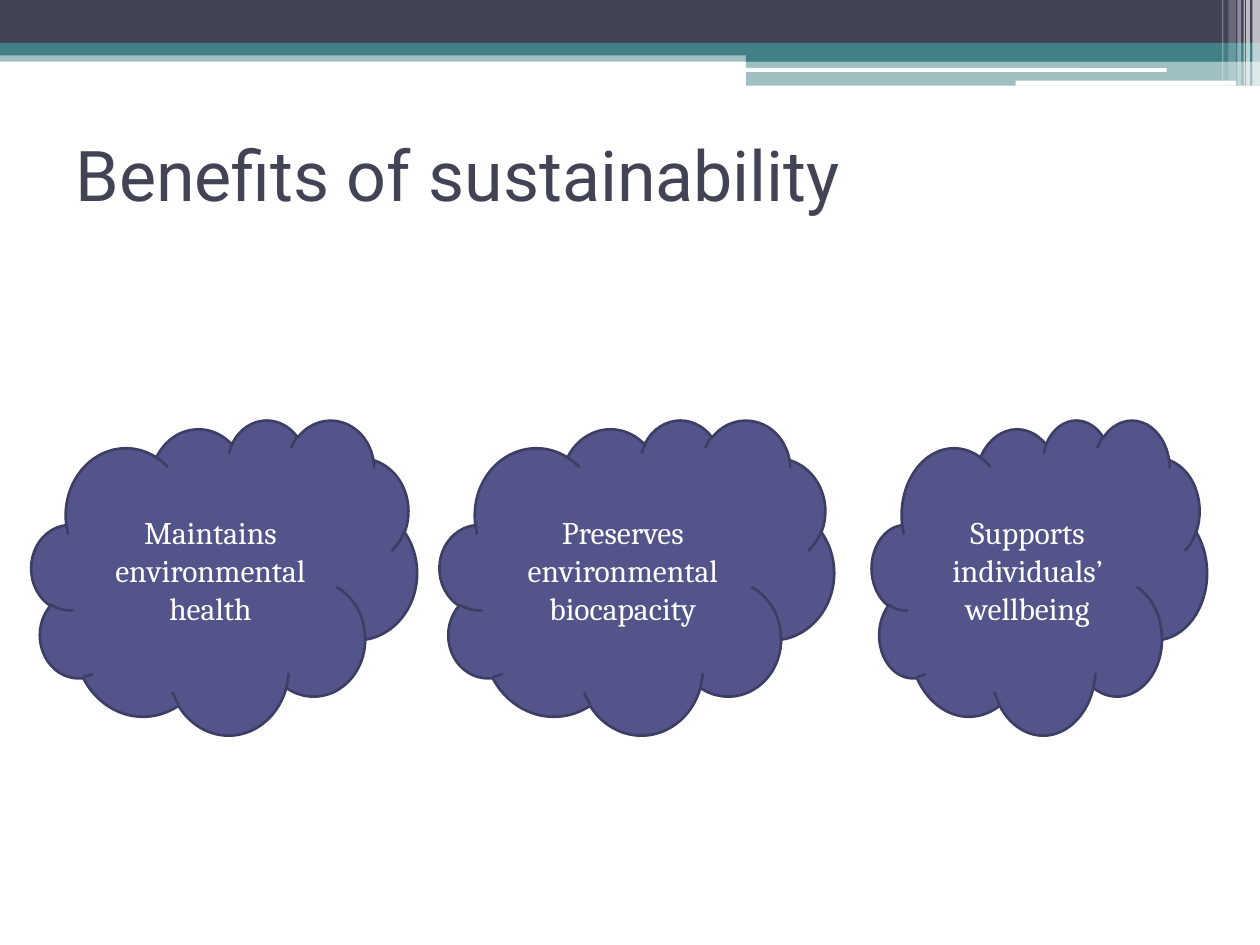
from lxml import etree
from pptx import Presentation
from pptx import util as u
from pptx.dml.color import RGBColor
from pptx.enum import shapes, text
from pptx.oxml.ns import qn

SLATE = RGBColor(0x42, 0x44, 0x56)
TEAL = RGBColor(0x43, 0x80, 0x86)
WHITE = RGBColor(0xFF, 0xFF, 0xFF)
INDIGO = RGBColor(0x53, 0x54, 0x8A)
DARK_INDIGO = RGBColor(0x3D, 0x3E, 0x66)

deck = Presentation()
deck.slide_width, deck.slide_height = u.Inches(10), u.Inches(7.5)
page = deck.slides.add_slide(deck.slide_layouts[5])


def add_filled(preset, bounds, color, opacity=100):
    shape = page.shapes.add_shape(preset, *[u.Inches(length) for length in bounds])
    shape.shadow.inherit = False
    shape.fill.solid()
    shape.fill.fore_color.rgb = color
    shape.line.fill.background()
    if opacity < 100:
        color_node = shape.fill._xPr.find(".//" + qn("a:srgbClr"))
        etree.SubElement(color_node, qn("a:alpha"), val=str(opacity * 1000))
    return shape


RECTANGLE = shapes.MSO_SHAPE.RECTANGLE
bands = [
    (0, 0.4, 10, 0.09, TEAL, 50),
    (0, 0, 10, 0.34, SLATE, 100),
    (0, 0.34, 10, 0.1, TEAL, 100),
    (5.92, 0.39, 4.08, 0.1, TEAL, 100),
    (5.92, 0.48, 4.08, 0.2, TEAL, 50),
]
for *bounds, color, opacity in bands:
    add_filled(RECTANGLE, bounds, color, opacity)

for bounds in [(5.91, 0.54, 3.35, 0.03), (8.06, 0.64, 1.75, 0.04)]:
    add_filled(shapes.MSO_SHAPE.ROUNDED_RECTANGLE, bounds, WHITE)

stripes = [
    (9.94, 0.06, 0.68, 65),
    (9.89, 0.03, 0.68, 65),
    (9.87, 0.01, 0.68, 60),
    (9.82, 0.03, 0.68, 40),
    (9.75, 0.06, 0.64, 20),
    (9.7, 0.01, 0.64, 30),
]
for left, width, height, opacity in stripes:
    add_filled(RECTANGLE, (left, 0, width, height), WHITE, opacity)

title = page.shapes.title
title.left, title.top = u.Inches(0.5), u.Inches(0.92)
title.width, title.height = u.Inches(9), u.Inches(0.92)
title.text_frame.text = "Benefits of sustainability"
title.text_frame.vertical_anchor = text.MSO_ANCHOR.MIDDLE
para = title.text_frame.paragraphs[0]
para.alignment = text.PP_ALIGN.LEFT
para.font.size = u.Pt(40)
para.font.name = "Roboto"
para.font.color.rgb = SLATE

benefits = [
    (0.25, 3.06, "Maintains environmental health"),
    (3.49, 3.13, "Preserves environmental biocapacity"),
    (6.92, 2.66, "Supports individuals’ wellbeing"),
]
for left, width, benefit in benefits:
    cloud = add_filled(shapes.MSO_SHAPE.CLOUD, (left, 3.33, width, 2.5), INDIGO)
    cloud.line.color.rgb = DARK_INDIGO
    cloud.line.width = u.Pt(1.5)
    frame = cloud.text_frame
    frame.text = benefit
    frame.word_wrap = True
    frame.vertical_anchor = text.MSO_ANCHOR.MIDDLE
    para = frame.paragraphs[0]
    para.alignment = text.PP_ALIGN.CENTER
    para.font.size = u.Pt(18)
    para.font.name = "Cambria"
    para.font.color.rgb = WHITE

deck.save("out.pptx")
